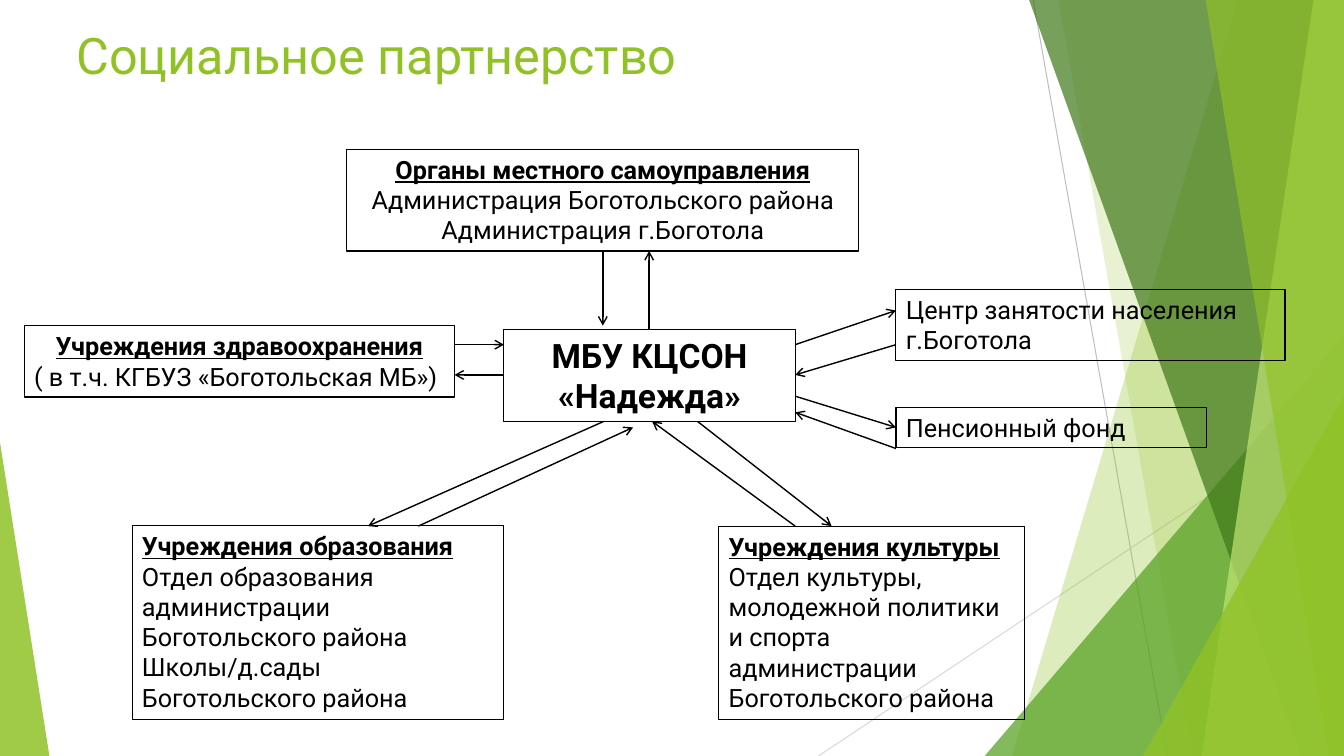
import lxml.etree
import pptx
import pptx.util
import pptx.dml.color
import pptx.enum.shapes
import pptx.enum.text
import pptx.oxml.ns

Pt = pptx.util.Pt
WIDTH, HEIGHT = 960, 540
LEFT = pptx.enum.text.PP_ALIGN.LEFT
CENTER = pptx.enum.text.PP_ALIGN.CENTER
BLACK, GREEN = "000000", "90C226"


def color(value):
    """Turn a hex string into a colour."""
    return pptx.dml.color.RGBColor.from_string(value)


def append_tag(parent, tag, **attributes):
    """Append a drawing element with the given attributes."""
    lxml.etree.SubElement(parent, pptx.oxml.ns.qn(tag), attributes)


def paint(shape, value, opacity):
    """Fill a shape with a see-through colour and no outline."""
    shape.shadow.inherit = False
    shape.line.fill.background()
    shape.fill.solid()
    shape.fill.fore_color.rgb = color(value)
    tint = next(shape._element.spPr.iter(pptx.oxml.ns.qn("a:srgbClr")))
    append_tag(tint, "a:alpha", val=str(opacity * 1000))


def add_band(page, top_left, bottom_left, value, opacity):
    """Draw a full-height band that reaches the right edge of the page."""
    builder = page.shapes.build_freeform(Pt(top_left), 0)
    corners = [(WIDTH, 0), (WIDTH, HEIGHT), (bottom_left, HEIGHT)]
    builder.add_line_segments([(Pt(x), Pt(y)) for x, y in corners], close=True)
    paint(builder.convert_to_shape(), value, opacity)


def add_triangle(page, left, top, width, apex, value, opacity):
    """Draw a right triangle standing on the bottom edge of the page."""
    kind = pptx.enum.shapes.MSO_SHAPE.ISOSCELES_TRIANGLE
    triangle = page.shapes.add_shape(kind, Pt(left), Pt(top), Pt(width), Pt(HEIGHT - top))
    triangle.adjustments[0] = apex
    paint(triangle, value, opacity)


def add_line(page, start, end, value=BLACK, weight=1, arrow=True):
    """Draw a straight line, with an arrowhead at its end if wanted."""
    kind = pptx.enum.shapes.MSO_CONNECTOR.STRAIGHT
    line = page.shapes.add_connector(kind, *(Pt(length) for length in (*start, *end)))
    line.line.color.rgb = color(value)
    line.line.width = Pt(weight)
    if arrow:
        append_tag(line._element.spPr.find(pptx.oxml.ns.qn("a:ln")), "a:tailEnd", type="arrow")
    append_tag(line._element.spPr, "a:effectLst")


def add_text(para, text, size=18, value=BLACK, bold=False, underline=False, align=LEFT):
    """Write formatted text into a paragraph."""
    para.alignment = align
    span = para.add_run()
    span.text = text
    span.font.name = "Roboto"
    span.font.size = Pt(size)
    span.font.bold = bold
    span.font.underline = underline
    span.font.color.rgb = color(value)


def add_box(page, left, top, width, height, heading=None, lines=(),
            heading_align=LEFT, align=LEFT, border=True, **style):
    """Add a text box with an optional underlined heading."""
    box = page.shapes.add_textbox(Pt(left), Pt(top), Pt(width), Pt(height))
    if border:
        box.line.color.rgb = color(BLACK)
        box.line.width = Pt(0.75)
    frame = box.text_frame
    frame.word_wrap = True
    entries = [(line, dict(style, align=align)) for line in lines]
    if heading:
        entries.insert(0, (heading, dict(bold=True, underline=True, align=heading_align)))
    for index, (text, look) in enumerate(entries):
        para = frame.add_paragraph() if index else frame.paragraphs[0]
        add_text(para, text, **look)


def add_backdrop(page):
    """Draw the green facets at the sides of the page."""
    add_line(page, (738, 0), (833.8, HEIGHT), "BFBFBF", 0.75, arrow=False)
    add_line(page, (WIDTH, 290.2), (584.6, HEIGHT), "D9D9D9", 0.75, arrow=False)
    add_band(page, 884.2, 722.9, GREEN, 30)
    add_band(page, 756, 851.8, GREEN, 20)
    add_triangle(page, 703.4, 239.8, 256.6, 1, "54A021", 72)
    add_band(page, 735.1, 929.5, "3F7819", 70)
    add_band(page, 938.2, 858.2, "C0E474", 70)
    add_band(page, 861.1, 949, GREEN, 65)
    add_triangle(page, 816.5, 283, 143.5, 1, GREEN, 80)
    add_triangle(page, 0, 316, 35.3, 0, GREEN, 85)


def add_partners(page):
    """Add the centre and its partner institutions."""
    add_box(page, 360, 235.4, 208, 65.5, lines=["МБУ КЦСОН «Надежда»"],
            align=CENTER, size=24, bold=True)
    add_box(page, 17.3, 232.6, 307.4, 51, "Учреждения здравоохранения",
            ["( в т.ч. КГБУЗ «Боготольская МБ»)"], heading_align=CENTER)
    add_box(page, 513.4, 375.8, 218.2, 138.2, "Учреждения культуры",
            ["Отдел культуры, молодежной политики и спорта администрации Боготольского района"])
    add_box(page, 247.7, 106.6, 365.8, 72.7, "Органы местного самоуправления",
            ["Администрация Боготольского района Администрация г.Боготола"],
            heading_align=CENTER, align=CENTER)
    add_box(page, 640, 206.6, 277.9, 51, lines=["Центр занятости населения г.Боготола"])
    add_box(page, 640, 290.9, 221.8, 29, lines=["Пенсионный фонд"])
    add_box(page, 94.3, 375.5, 265.7, 138.2, "Учреждения образования",
            ["Отдел образования администрации Боготольского района",
             "Школы/д.сады Боготольского района"])


def add_arrows(page):
    """Link the centre with each partner in both directions."""
    arrows = [
        ((431.3, 301), (262.8, 375.8)), ((298.8, 375.8), (452.2, 305.3)),
        ((568, 375.8), (465.8, 301)), ((498.2, 301), (594, 375.8)),
        ((430.6, 179.3), (430.6, 232.6)), ((463.7, 235.4), (463.7, 179.3)),
        ((568, 246.2), (640, 221.8)), ((640, 246.2), (568, 267.8)),
        ((568, 283), (640, 305.3)), ((640, 320.4), (568, 294.5)),
        ((324.7, 246.2), (360, 246.2)), ((360, 267.8), (324.7, 267.8)),
    ]
    for start, end in arrows:
        add_line(page, start, end)


def main():
    """Build the social partnership slide."""
    deck = pptx.Presentation()
    deck.slide_width, deck.slide_height = Pt(WIDTH), Pt(HEIGHT)
    page = deck.slides.add_slide(deck.slide_layouts[6])
    add_backdrop(page)
    add_box(page, 47.5, 13.7, 676.8, 103.7, lines=["Социальное партнерство"],
            border=False, size=36, value=GREEN)
    add_partners(page)
    add_arrows(page)
    deck.save("out.pptx")


if __name__ == "__main__":
    main()
